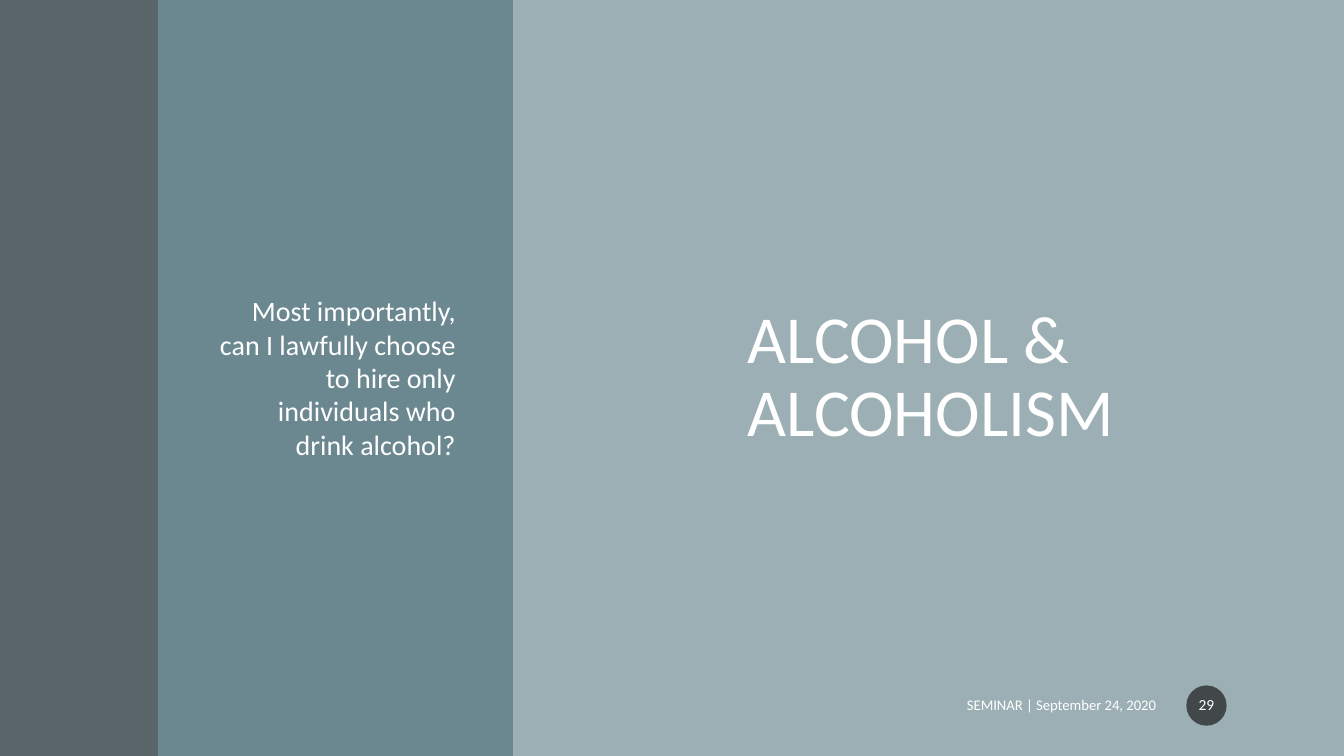
"""Build the section slide on alcohol and alcoholism."""
from lxml import etree
from pptx import Presentation
from pptx.dml.color import RGBColor
from pptx.enum.shapes import MSO_SHAPE
from pptx.enum.text import MSO_ANCHOR, MSO_AUTO_SIZE, PP_ALIGN
from pptx.oxml.ns import qn
from pptx.util import Pt

RECT, OVAL = MSO_SHAPE.RECTANGLE, MSO_SHAPE.OVAL
MIDDLE, NO_FIT = MSO_ANCHOR.MIDDLE, MSO_AUTO_SIZE.NONE
LEFT, CENTER, RIGHT = PP_ALIGN.LEFT, PP_ALIGN.CENTER, PP_ALIGN.RIGHT


def paint(fill, color, alpha=100):
    fill.solid()
    fill.fore_color.rgb = RGBColor.from_string(color)
    if alpha < 100:
        for clr in sp.element.spPr.iter(qn("a:srgbClr")):
            etree.SubElement(clr, qn("a:alpha"), val=str(alpha * 1000))


def write(sp, text, size, align, spacing, insets):
    tf = sp.text_frame
    tf.text = text
    tf.word_wrap = True
    tf.auto_size = NO_FIT
    tf.vertical_anchor = MIDDLE
    tf.margin_left, tf.margin_top, tf.margin_right, tf.margin_bottom = map(Pt, insets)
    p = tf.paragraphs[0]
    p.alignment = align
    p.line_spacing = spacing
    p.space_before = Pt(0)
    p.font.name = "Calibri"
    p.font.size = Pt(size)
    p.font.bold = False
    paint(p.font.fill, "FFFFFF")


prs = Presentation()
prs.slide_width, prs.slide_height = Pt(960), Pt(540)
s = prs.slides.add_slide(prs.slide_layouts[2])
paint(s.background.fill, "9BAFB5")

title, body = s.placeholders
title.left, title.top, title.width, title.height = Pt(432.7), Pt(77.8), Pt(463.7), Pt(384.5)
write(title, "ALCOHOL & ALCOHOLISM", 48, LEFT, 0.9, (101.5, 14.4, 21.6, 14.4))

for shape, x, y, w, h, color, alpha in (
    (RECT, 0, 0, 113, 540, "4A5356", 80),
    (RECT, 113, 0, 253.4, 540, "6B8890", 100),
    (OVAL, 847.4, 489.6, 28.8, 28.8, "1D1D1D", 70),
):
    sp = s.shapes.add_shape(shape, Pt(x), Pt(y), Pt(w), Pt(h))
    sp.shadow.inherit = False
    sp.line.fill.background()
    paint(sp.fill, color, alpha)
write(sp, "29", 11, CENTER, 0.9, (1.4, 3.6, 1.4, 3.6))

body.left, body.top, body.width, body.height = Pt(146.9), Pt(158.4), Pt(185.8), Pt(223.9)
write(body, "Most importantly, can I lawfully choose to hire only individuals who drink alcohol?",
      20, RIGHT, 0.99, (7.2, 3.6, 7.2, 3.6))
sp.element.addprevious(body.element)

footer = s.shapes.add_textbox(Pt(511.2), Pt(491), Pt(321.8), Pt(25.2))
write(footer, "SEMINAR | September 24, 2020", 10.5, RIGHT, 1, (7.2, 3.6, 7.2, 3.6))

prs.save("out.pptx")
